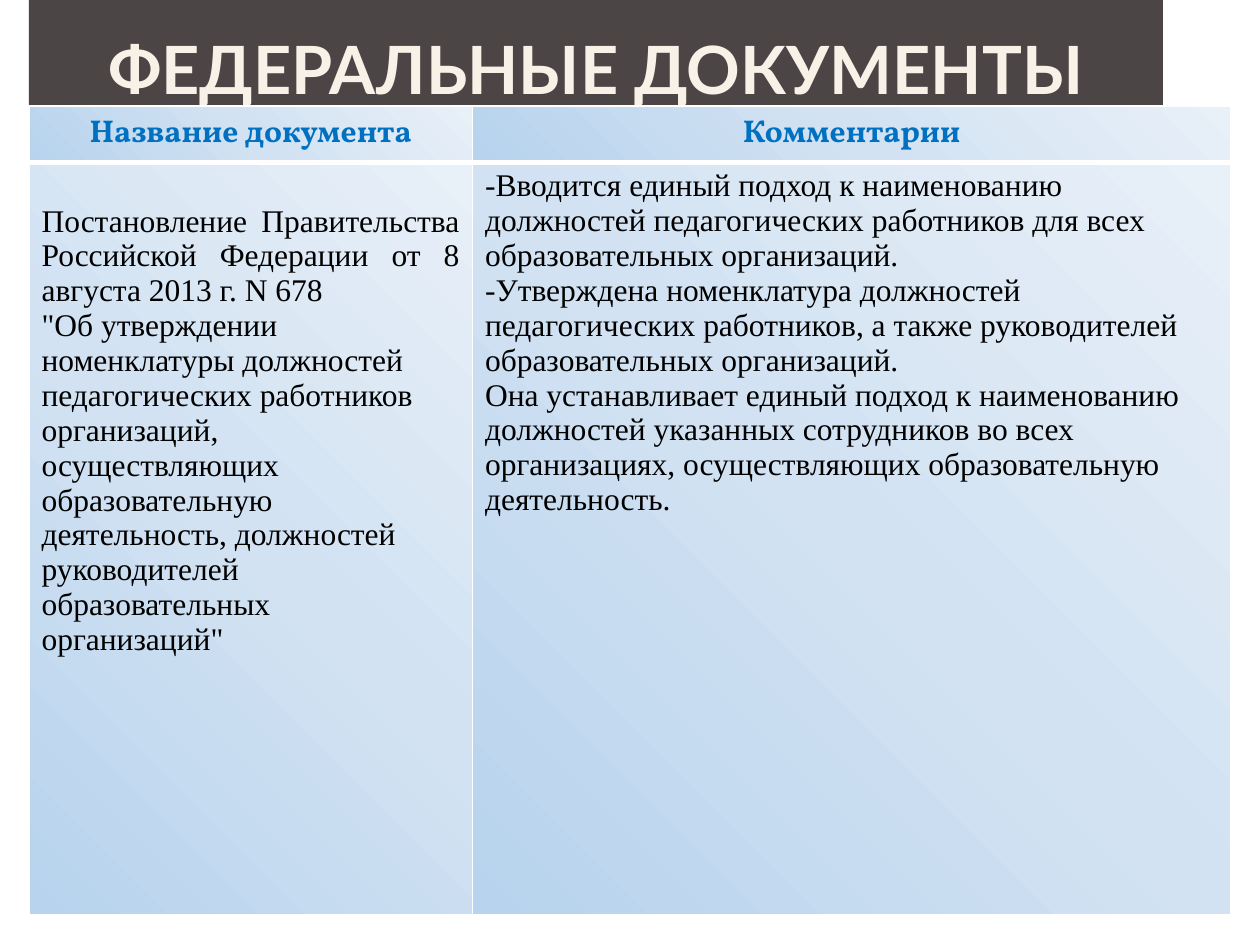
from dataclasses import dataclass
from typing import NamedTuple

from lxml.etree import SubElement
from pptx import Presentation
from pptx.dml.color import RGBColor
from pptx.enum.text import MSO_ANCHOR, MSO_AUTO_SIZE, PP_ALIGN
from pptx.oxml import parse_xml
from pptx.oxml.ns import nsdecls, qn
from pptx.util import Inches, Pt


@dataclass(frozen=True)
class Theme:
    band: str = "4C4545"
    title: str = "F7F1E7"
    title_outline: str = "3D2E29"
    heading: str = "0070C0"
    body: str = "000000"
    border: str = "FFFFFF"
    gradient: tuple = ((0, "B7D3ED"), (50, "D2E2F2"), (100, "E8F0F8"))
    title_font: dict = None
    heading_font: dict = None
    body_font: dict = None


THEME = Theme(
    title_font={"name": "Lato", "size": Pt(38), "bold": True},
    heading_font={"name": "Vollkorn", "size": Pt(18), "bold": True},
    body_font={"name": "Times New Roman", "size": Pt(18), "bold": False},
)


class Passage(NamedTuple):
    text: str
    align: PP_ALIGN = PP_ALIGN.LEFT


class CellContent(NamedTuple):
    passages: list
    font: dict
    color: str
    borders: dict  # side -> width in points
    top_margin: float = 0.05


def write_passage(paragraph, passage: Passage, font: dict, color: str) -> None:
    paragraph.text = passage.text
    paragraph.alignment = passage.align
    for run in paragraph.runs:
        for attribute, value in font.items():
            setattr(run.font, attribute, value)
        run.font.color.rgb = RGBColor.from_string(color)


def style_cell(cell, borders: dict) -> None:
    """Give a cell its borders and a gradient spreading from the bottom left."""
    properties = cell._tc.get_or_add_tcPr()
    for side, width in borders.items():
        line = SubElement(properties, qn(f"a:ln{side}"), w=str(Pt(width)))
        fill = SubElement(line, qn("a:solidFill"))
        SubElement(fill, qn("a:srgbClr"), val=THEME.border)
    stops = "".join(
        f'<a:gs pos="{position * 1000}"><a:srgbClr val="{color}"/></a:gs>'
        for position, color in THEME.gradient
    )
    properties.append(parse_xml(
        f'<a:gradFill {nsdecls("a")} rotWithShape="1"><a:gsLst>{stops}</a:gsLst>'
        '<a:path path="circle"><a:fillToRect t="100000" r="100000"/></a:path>'
        "</a:gradFill>"
    ))


def fill_cell(cell, content: CellContent) -> None:
    cell.margin_top = Inches(content.top_margin)
    frame = cell.text_frame
    for index, passage in enumerate(content.passages):
        paragraph = frame.add_paragraph() if index else frame.paragraphs[0]
        write_passage(paragraph, passage, content.font, content.color)
    style_cell(cell, content.borders)


def add_title(slide, text: str) -> None:
    title = slide.shapes.title
    title.left, title.top = Inches(0.23), Inches(0)
    title.width, title.height = Inches(9), Inches(0.86)
    title.fill.solid()
    title.fill.fore_color.rgb = RGBColor.from_string(THEME.band)
    frame = title.text_frame
    frame_format = {
        "auto_size": MSO_AUTO_SIZE.NONE, "word_wrap": True,
        "vertical_anchor": MSO_ANCHOR.BOTTOM,
        "margin_left": Inches(0.05), "margin_right": Inches(0.05),
        "margin_top": 0, "margin_bottom": 0,
    }
    for attribute, value in frame_format.items():
        setattr(frame, attribute, value)
    heading = frame.paragraphs[0]
    write_passage(heading, Passage(text, PP_ALIGN.CENTER), THEME.title_font, THEME.title)
    # Hairline around the letters
    heading.runs[0].font._element.insert(0, parse_xml(
        f'<a:ln {nsdecls("a")} w="{Pt(0.04)}"><a:solidFill>'
        f'<a:srgbClr val="{THEME.title_outline}"/></a:solidFill></a:ln>'
    ))


def add_documents_table(slide, rows: list) -> None:
    column_widths, row_heights = (3.52, 6.02), (0.37, 5.97)
    table = slide.shapes.add_table(
        len(row_heights), len(column_widths), Inches(0.23), Inches(0.84),
        Inches(sum(column_widths)), Inches(sum(row_heights)),
    ).table
    table.horz_banding = False
    for column, width in zip(table.columns, column_widths):
        column.width = Inches(width)
    for row, height, contents in zip(table.rows, row_heights, rows):
        row.height = Inches(height)
        for cell, content in zip(row.cells, contents):
            fill_cell(cell, content)


def heading_cell(text: str) -> CellContent:
    return CellContent([Passage(text, PP_ALIGN.CENTER)], THEME.heading_font,
                       THEME.heading, {"L": 1, "R": 1, "T": 1, "B": 3})


def body_cell(passages: list, top_margin: float = 0.05) -> CellContent:
    return CellContent(passages, THEME.body_font, THEME.body,
                       {"L": 1, "R": 1, "T": 3, "B": 1}, top_margin)


DECREE = [
    Passage("Постановление Правительства Российской Федерации от 8 августа 2013 г. N 678 ",
            PP_ALIGN.JUSTIFY),
    Passage('"Об утверждении номенклатуры должностей педагогических работников '
            "организаций, осуществляющих образовательную деятельность, должностей "
            'руководителей образовательных организаций"'),
]
COMMENTS = [Passage(
    "-Вводится единый подход к наименованию должностей педагогических работников "
    "для всех образовательных организаций.\n"
    "-Утверждена номенклатура должностей педагогических работников, а также "
    "руководителей образовательных организаций.\n"
    "Она устанавливает единый подход к наименованию должностей указанных сотрудников "
    "во всех организациях, осуществляющих образовательную деятельность."
)]


def main() -> None:
    presentation = Presentation()
    presentation.slide_width, presentation.slide_height = Inches(10), Inches(7.5)
    slide = presentation.slides.add_slide(presentation.slide_layouts[5])

    # Title band
    add_title(slide, "ФЕДЕРАЛЬНЫЕ ДОКУМЕНТЫ")

    # Documents and comments; the decree starts one line lower
    add_documents_table(slide, [
        [heading_cell("Название документа"), heading_cell("Комментарии")],
        [body_cell(DECREE, top_margin=0.33), body_cell(COMMENTS)],
    ])
    presentation.save("out.pptx")


if __name__ == "__main__":
    main()
